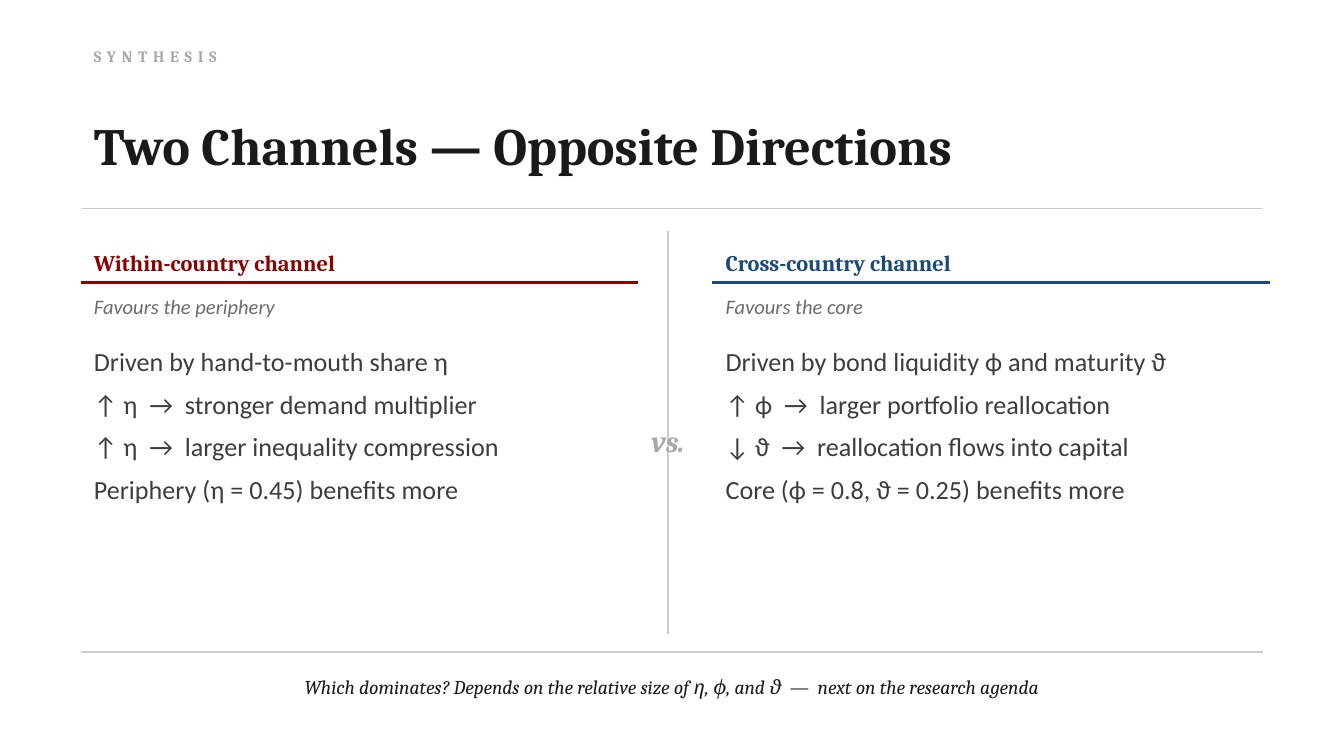
from lxml import etree
from pptx import Presentation
from pptx.dml.color import RGBColor
from pptx.enum.shapes import MSO_CONNECTOR
from pptx.enum.text import MSO_ANCHOR, PP_ALIGN
from pptx.oxml.ns import qn
from pptx.util import Inches, Pt

STRAIGHT = MSO_CONNECTOR.STRAIGHT
TOP, MIDDLE, BOTTOM = MSO_ANCHOR.TOP, MSO_ANCHOR.MIDDLE, MSO_ANCHOR.BOTTOM
LEFT, CENTER = PP_ALIGN.LEFT, PP_ALIGN.CENTER

# The grid has ten columns and ten rows to the inch, on a 16:9 slide
CELL = Inches(0.1)
SLIDE_COLUMNS, SLIDE_ROWS = 100, 56.25
MARGIN, CONTENT = 6, 88
PANEL_WIDTH, PANEL_GAP = 41.5, 5.5

INK, BODY, MUTED, PALE, RULE = "1A1A1A", "3D3D3D", "6B6B6B", "A8A8A8", "CCCCCC"
RED, BLUE = "8B0000", "1A4A7A"
SERIF, SANS = "Cambria", "Calibri"

STYLES = {
    "label": {"name": SERIF, "size": Pt(8.5), "bold": True},
    "title": {"name": SERIF, "size": Pt(28), "bold": True},
    "heading": {"name": SERIF, "size": Pt(12), "bold": True},
    "subheading": {"name": SANS, "size": Pt(11), "italic": True},
    "body": {"name": SANS, "size": Pt(14)},
    "versus": {"name": SERIF, "size": Pt(16), "bold": True, "italic": True},
    "closing": {"name": SERIF, "size": Pt(10.5), "italic": True},
}

PANELS = [
    ("Within-country channel", RED, "Favours the periphery", [
        "Driven by hand-to-mouth share η",
        "↑ η  →  stronger demand multiplier",
        "↑ η  →  larger inequality compression",
        "Periphery (η = 0.45) benefits more",
    ]),
    ("Cross-country channel", BLUE, "Favours the core", [
        "Driven by bond liquidity ϕ and maturity ϑ",
        "↑ ϕ  →  larger portfolio reallocation",
        "↓ ϑ  →  reallocation flows into capital",
        "Core (ϕ = 0.8, ϑ = 0.25) benefits more",
    ]),
]


def color(value):
    return RGBColor.from_string(value)


def cells(*counts):
    return [round(count * CELL) for count in counts]


class SlideBuilder:
    """Draws styled elements on the current slide, placed by grid cells."""

    def __init__(self, slide):
        self.slide = slide
        background = slide.background.fill
        background.solid()
        background.fore_color.rgb = color("FFFFFF")

    def text(self, box, lines, style, tint, anchor=MIDDLE, align=LEFT,
             space_after=0, tracking=0):
        frame = self.slide.shapes.add_textbox(*cells(*box)).text_frame
        frame.word_wrap = True
        frame.vertical_anchor = anchor
        frame.text = "\n".join(lines)
        for paragraph in frame.paragraphs:
            paragraph.alignment = align
            paragraph.space_after = Pt(space_after)
            for run in paragraph.runs:
                for attribute, value in STYLES[style].items():
                    setattr(run.font, attribute, value)
                run.font.color.rgb = color(tint)
                if tracking:
                    run._r.get_or_add_rPr().set("spc", str(tracking * 100))

    def line(self, left, top, width=0, height=0, tint=RULE, weight=0.75):
        ends = cells(left, top, left + width, top + height)
        connector = self.slide.shapes.add_connector(STRAIGHT, *ends)
        connector.line.color.rgb = color(tint)
        connector.line.width = Pt(weight)
        etree.SubElement(connector._element.spPr, qn("a:effectLst"))

    def panel(self, left, heading, tint, subheading, points):
        self.text((left, 17.2, PANEL_WIDTH, 3.8), [heading], "heading", tint, BOTTOM)
        self.line(left, 21, PANEL_WIDTH, tint=tint, weight=1.5)
        self.text((left, 21.4, PANEL_WIDTH, 2.8), [subheading], "subheading", MUTED)
        self.text((left, 25.2, PANEL_WIDTH, 21.5), points, "body", BODY, TOP,
                  space_after=6)


def main():
    presentation = Presentation()
    presentation.slide_width, presentation.slide_height = cells(SLIDE_COLUMNS, SLIDE_ROWS)
    builder = SlideBuilder(presentation.slides.add_slide(presentation.slide_layouts[6]))

    # Header
    builder.text((MARGIN, 2.8, 90, 2.8), ["SYNTHESIS"], "label", PALE, tracking=3)
    builder.text((MARGIN, 6.5, CONTENT, 8.5), ["Two Channels — Opposite Directions"],
                 "title", INK)
    builder.line(MARGIN, 15.5, CONTENT)

    # The two channels side by side
    for index, panel in enumerate(PANELS):
        builder.panel(MARGIN + index * (PANEL_WIDTH + PANEL_GAP), *panel)

    # Divider
    builder.line(49.7, 17.2, height=30)
    builder.text((46.2, 30.5, 7, 4.5), ["vs."], "versus", PALE, align=CENTER)

    # Closing question
    builder.line(MARGIN, 48.5, CONTENT)
    builder.text((MARGIN, 49.6, CONTENT, 3),
                 ["Which dominates? Depends on the relative size of η, ϕ, and ϑ"
                  "  —  next on the research agenda"],
                 "closing", INK, align=CENTER)

    presentation.save("out.pptx")


if __name__ == "__main__":
    main()
